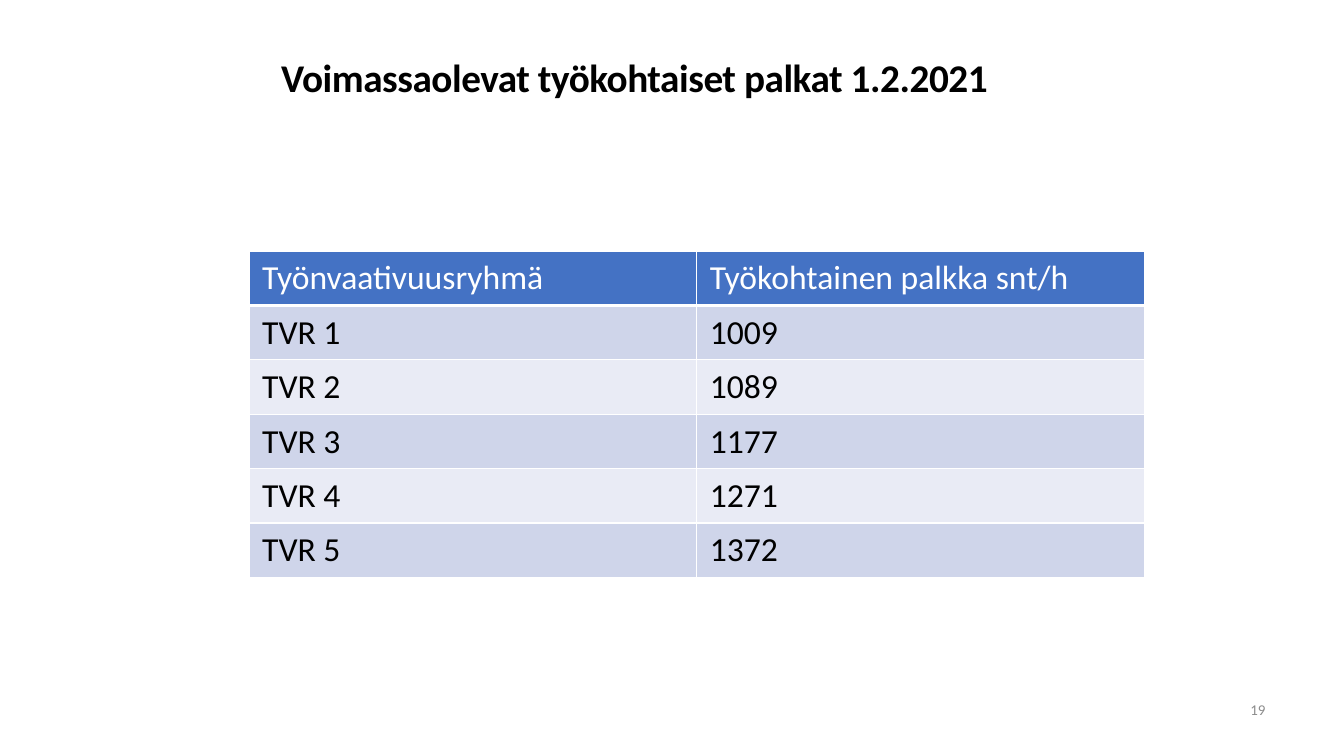
from dataclasses import dataclass, field
from typing import Any

from lxml.etree import SubElement
from pptx import Presentation
from pptx.dml.color import RGBColor
from pptx.enum.text import MSO_ANCHOR as Anchor, PP_ALIGN as Align
from pptx.oxml.ns import qn
from pptx.util import Inches, Pt

WHITE, BLACK, GREY = "FFFFFF", "000000", "8C8C8C"
HEADER_FILL, BANDS = "4472C4", ("CFD5EA", "E9EBF5")
ROW_HEIGHT, COLUMN_WIDTH = 0.54, 4.44

WAGES = [
    ("Työnvaativuusryhmä", "Työkohtainen palkka snt/h"),
    ("TVR 1", "1009"),
    ("TVR 2", "1089"),
    ("TVR 3", "1177"),
    ("TVR 4", "1271"),
    ("TVR 5", "1372"),
]


@dataclass
class Label:
    text: str
    place: tuple[float, float, float, float]
    size: float
    color: str
    bold: bool = False
    spacing: int = 0  # hundredths of a point
    indent: float = 0
    frame: dict[str, Any] = field(default_factory=dict)
    paragraph: dict[str, Any] = field(default_factory=dict)


LABELS = [
    Label("Voimassaolevat työkohtaiset palkat 1.2.2021", (2.67, 0.57, 8.18, 0.73),
          28, BLACK, bold=True, spacing=-30, indent=0.02,
          paragraph={"line_spacing": Pt(27)}),
    Label("19", (11.92, 6.9, 0.73, 0.27), 10.7, GREY,
          frame={"vertical_anchor": Anchor.MIDDLE},
          paragraph={"alignment": Align.RIGHT}),
]


def rgb(value: str) -> RGBColor:
    return RGBColor.from_string(value)


def apply(target: Any, formats: dict[str, Any]) -> None:
    for name, value in formats.items():
        setattr(target, name, value)


def style_font(font: Any, size: float, color: str, bold: bool = False) -> None:
    apply(font, {"name": "Calibri", "size": Pt(size), "bold": bold})
    font.color.rgb = rgb(color)


def draw_label(slide: Any, label: Label) -> None:
    frame = slide.shapes.add_textbox(*map(Inches, label.place)).text_frame
    apply(frame, {"word_wrap": True, **label.frame})
    line = frame.paragraphs[0]
    apply(line, label.paragraph)
    if label.indent:
        line._p.get_or_add_pPr().set("marL", str(Inches(label.indent)))
    words = line.add_run()
    words.text = label.text
    style_font(words.font, label.size, label.color, label.bold)
    if label.spacing:
        words._r.get_or_add_rPr().set("spc", str(label.spacing))


def draw_borders(cell: Any, bottom: float) -> None:
    widths = {"L": 1, "R": 1, "T": 1, "B": bottom}
    for side, width in widths.items():
        edge = SubElement(cell._tc.get_or_add_tcPr(), qn(f"a:ln{side}"), w=str(Pt(width)))
        SubElement(SubElement(edge, qn("a:solidFill")), qn("a:srgbClr"), val=WHITE)


def draw_wages(slide: Any, left: float, top: float) -> None:
    rows, columns = len(WAGES), len(WAGES[0])
    wages = slide.shapes.add_table(
        rows, columns, Inches(left), Inches(top),
        Inches(columns * COLUMN_WIDTH), Inches(rows * ROW_HEIGHT)).table
    margins = {"margin_left": Inches(0.13), "margin_right": Inches(0.13),
               "margin_top": Inches(0.07), "margin_bottom": Inches(0.07)}
    for row, entries in enumerate(WAGES):
        header = row == 0
        for column, entry in enumerate(entries):
            cell = wages.cell(row, column)
            apply(cell, {"text": entry, **margins})
            draw_borders(cell, bottom=3 if header else 1)
            cell.fill.solid()
            cell.fill.fore_color.rgb = rgb(HEADER_FILL if header else BANDS[(row - 1) % 2])
            style_font(cell.text_frame.paragraphs[0].runs[0].font, 24,
                       WHITE if header else BLACK)


def main() -> None:
    deck = Presentation()
    apply(deck, {"slide_width": Inches(13.33), "slide_height": Inches(7.5)})
    slide = deck.slides.add_slide(deck.slide_layouts[6])

    # Heading and page number
    for label in LABELS:
        draw_label(slide, label)

    # Wage table
    draw_wages(slide, 2.47, 2.49)

    deck.save("out.pptx")


if __name__ == "__main__":
    main()
